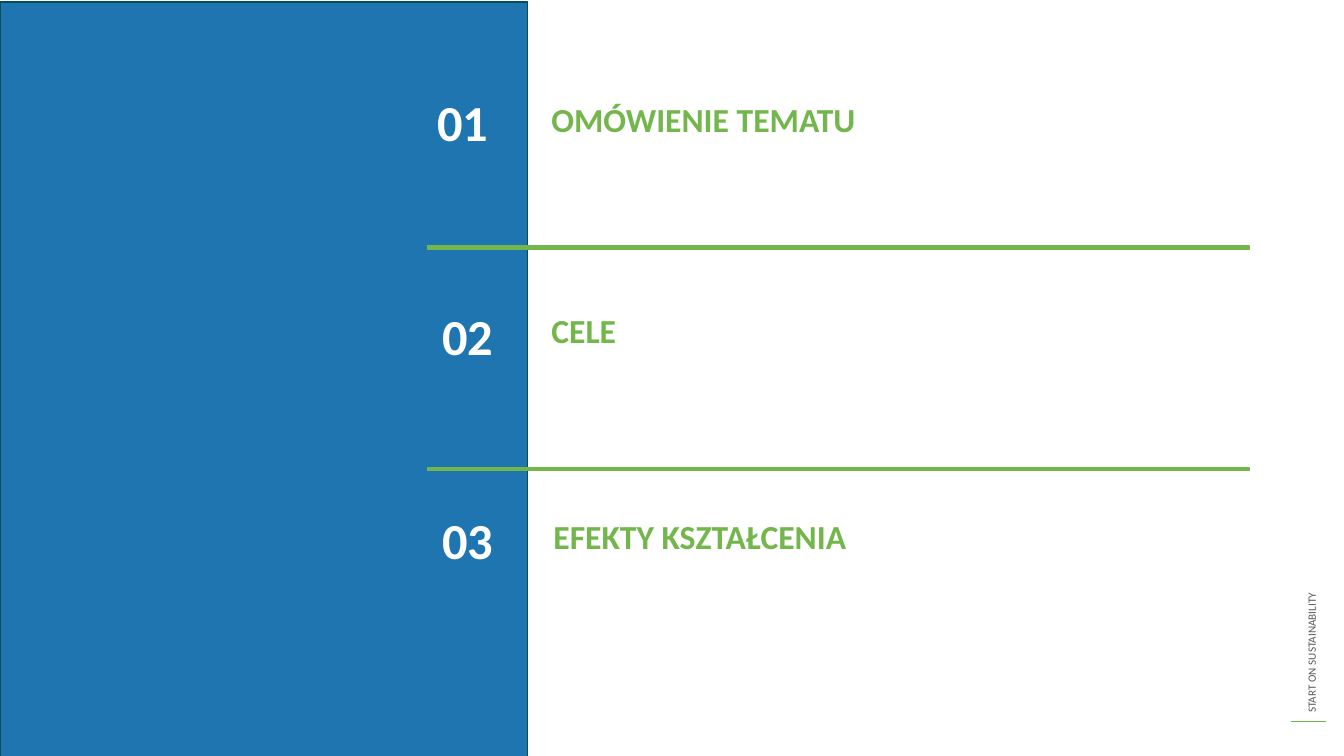
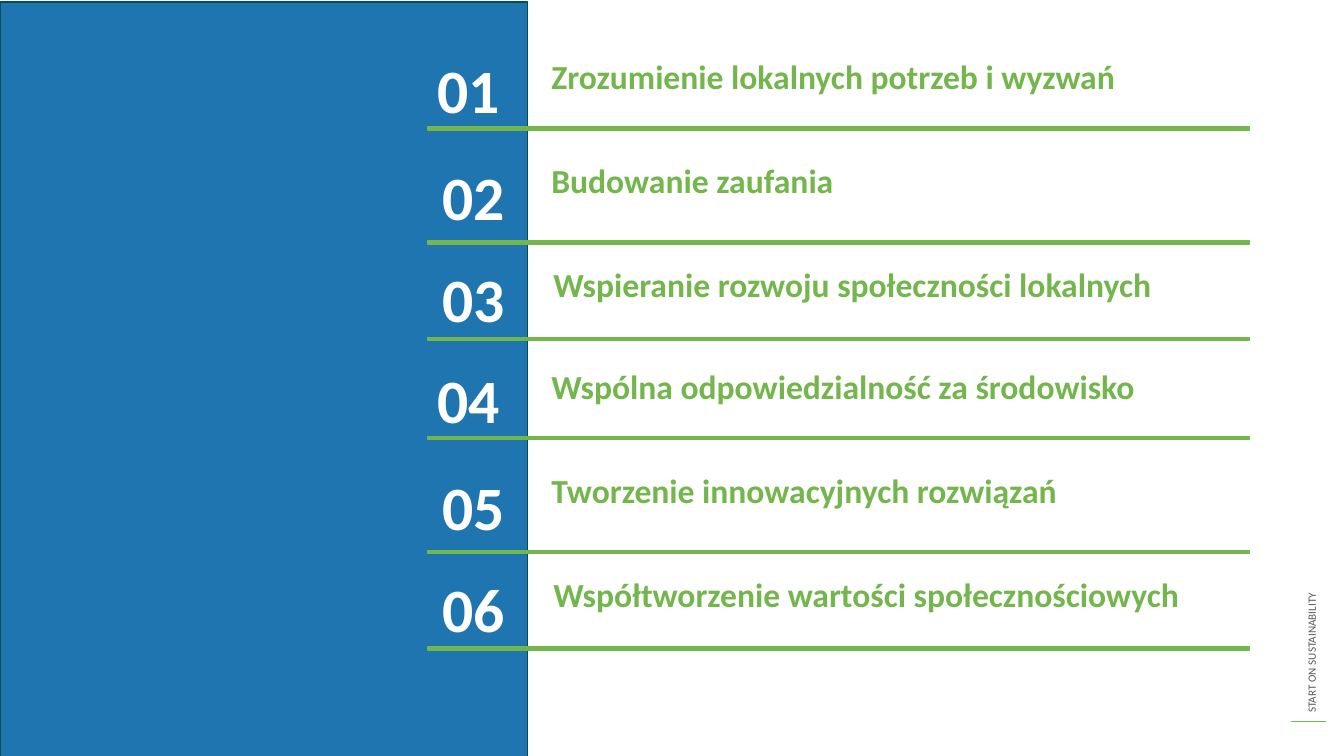
from dataclasses import dataclass

from lxml.etree import SubElement
from pptx import Presentation
from pptx.dml.color import RGBColor
from pptx.enum.shapes import MSO_CONNECTOR, MSO_SHAPE
from pptx.enum.text import MSO_ANCHOR
from pptx.oxml.ns import qn
from pptx.shapes.autoshape import Shape
from pptx.slide import Slide
from pptx.util import Inches, Pt


@dataclass(frozen=True)
class Theme:
    font: str = "Calibri"
    blue: RGBColor = RGBColor(0x1E, 0x75, 0xB0)
    teal: RGBColor = RGBColor(0x05, 0x4F, 0x50)
    green: RGBColor = RGBColor(0x73, 0xB6, 0x4B)
    gray: RGBColor = RGBColor(0x59, 0x59, 0x59)
    white: RGBColor = RGBColor(0xFF, 0xFF, 0xFF)
    foot: int = 8
    label: int = 24
    line: int = 1


@dataclass(frozen=True)
class Row:
    """Left and top of a number and its label, and the top of the rule below."""
    num_x: float
    num_y: float
    label_x: float
    label_y: float
    rule_y: float | None

    def shift(self, down: float) -> "Row":
        rule = None if self.rule_y is None else self.rule_y + down
        return Row(self.num_x, self.num_y + down,
                   self.label_x, self.label_y + down, rule)


@dataclass(frozen=True)
class Page:
    num_size: int
    rows: list[Row]
    labels: list[str]


THEME = Theme()
WIDE = [
    Row(4.24, 0.67, 5.37, 0.93, 2.44),
    Row(4.29, 2.8, 5.37, 3.03, 4.64),
    Row(4.29, 4.82, 5.39, 5.07, None),
]
TIGHT = [
    Row(4.24, 0.25, 5.37, 0.51, 1.26),
    Row(4.29, 1.31, 5.37, 1.54, 2.39),
    Row(4.29, 2.32, 5.39, 2.57, 3.35),
]
STEP = 3.07

PAGES = [
    Page(36, WIDE, ["OMÓWIENIE TEMATU", "CELE", "EFEKTY KSZTAŁCENIA"]),
    Page(44, TIGHT + [row.shift(STEP) for row in TIGHT], [
        "Zrozumienie lokalnych potrzeb i wyzwań",
        "Budowanie zaufania",
        "Wspieranie rozwoju społeczności lokalnych",
        "Wspólna odpowiedzialność za środowisko",
        "Tworzenie innowacyjnych rozwiązań",
        "Współtworzenie wartości społecznościowych",
    ]),
]


def add_box(slide: Slide, x: float, y: float, w: float, h: float,
            fill: RGBColor, edge: RGBColor) -> None:
    box = slide.shapes.add_shape(MSO_SHAPE.RECTANGLE, Inches(x), Inches(y),
                                 Inches(w), Inches(h))
    box.shadow.inherit = False
    box.fill.solid()
    box.fill.fore_color.rgb = fill
    box.line.color.rgb = edge
    box.line.width = Pt(THEME.line)


def add_text(slide: Slide, text: str, x: float, y: float, w: float, h: float,
             size: int, color: RGBColor, bold: bool = True,
             space: float = 1.0) -> Shape:
    box = slide.shapes.add_textbox(Inches(x), Inches(y), Inches(w), Inches(h))
    frame = box.text_frame
    frame.word_wrap = True
    frame.vertical_anchor = MSO_ANCHOR.TOP
    frame.text = text
    para = frame.paragraphs[0]
    para.line_spacing = space
    font = para.runs[0].font
    font.name, font.size, font.bold = THEME.font, Pt(size), bold
    font.color.rgb = color
    return box


def add_frame(slide: Slide) -> None:
    """Draw the side band and the upright footer that every slide carries."""
    foot = add_text(slide, "START ON SUSTAINABILITY", 10.78, 4.82, 4.46, 0.24,
                    THEME.foot, THEME.gray, bold=False)
    foot.rotation = 270
    line = slide.shapes.add_connector(MSO_CONNECTOR.STRAIGHT, Inches(12.8),
                                      Inches(7.16), Inches(13.15), Inches(7.16))
    line.line.color.rgb = THEME.green
    line.line.width = Pt(THEME.line)
    SubElement(line._element.spPr, qn("a:effectLst"))
    add_box(slide, 0, 0.02, 5.23, 7.5, THEME.blue, THEME.teal)


def add_row(slide: Slide, row: Row, num: int, label: str, size: int) -> None:
    add_text(slide, label, row.label_x, row.label_y, 7.18, 0.37,
             THEME.label, THEME.green)
    add_text(slide, f"{num:02}", row.num_x, row.num_y, 1.35, 1.05,
             size, THEME.white, space=1.3)
    if row.rule_y is not None:
        add_box(slide, 4.24, row.rule_y, 8.15, 0.03, THEME.green, THEME.green)


def main() -> None:
    deck = Presentation()
    deck.slide_width, deck.slide_height = Inches(13.33), Inches(7.5)
    blank = deck.slide_layouts[6]
    for page in PAGES:
        slide = deck.slides.add_slide(blank)
        add_frame(slide)
        for num, (row, label) in enumerate(zip(page.rows, page.labels), 1):
            add_row(slide, row, num, label, page.num_size)
    deck.save("out.pptx")


if __name__ == "__main__":
    main()
